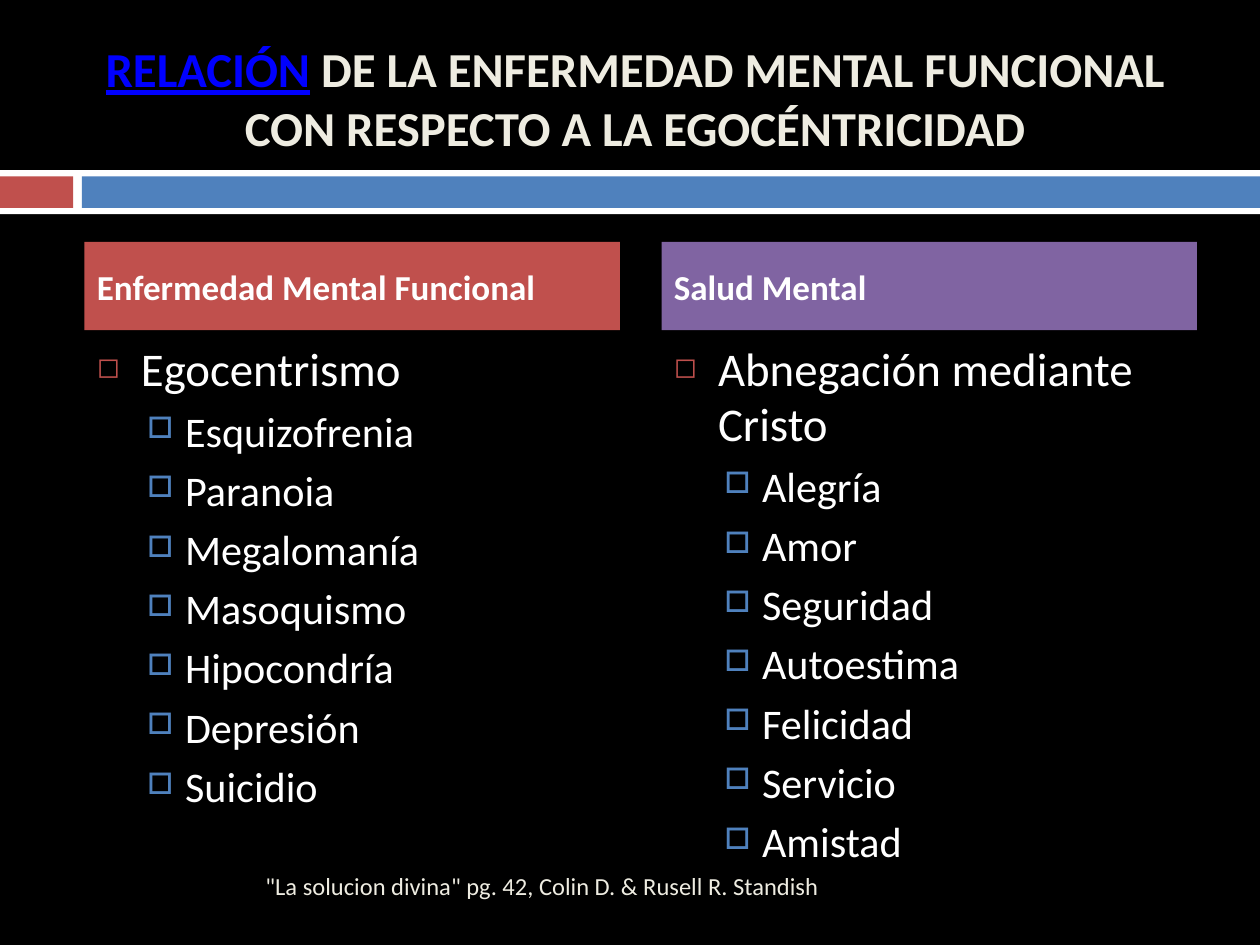
"""Builds a slide that compares functional mental illness with mental health."""
import pptx
import pptx.util
import pptx.dml.color
import pptx.enum.shapes
import pptx.enum.text
import pptx.oxml
import pptx.oxml.ns
from pptx.util import Inches

RGB = pptx.dml.color.RGBColor
BLACK = RGB(0x00, 0x00, 0x00)
WHITE = RGB(0xFF, 0xFF, 0xFF)
CREAM = RGB(0xEE, 0xEC, 0xE1)
RED = RGB(0xC0, 0x50, 0x4D)
BLUE = RGB(0x4F, 0x81, 0xBD)
PURPLE = RGB(0x80, 0x64, 0xA2)
LINK = RGB(0x00, 0x00, 0xFF)
ALIGN = pptx.enum.text.PP_ALIGN
MIDDLE = pptx.enum.text.MSO_ANCHOR.MIDDLE
TOP = pptx.enum.text.MSO_ANCHOR.TOP

LEVELS = (
    dict(size=26.8, before=7, left=0.35, hang=0.35, mark="◻", color=RED, scale=60),
    dict(size=24.1, before=5.5, left=0.7, hang=0.3, mark="□", color=BLUE, scale=70),
)
COLUMNS = (
    ("Enfermedad Mental Funcional", RED, "Egocentrismo",
     ("Esquizofrenia", "Paranoia", "Megalomanía", "Masoquismo",
      "Hipocondría", "Depresión", "Suicidio")),
    ("Salud Mental", PURPLE, "Abnegación mediante Cristo",
     ("Alegría", "Amor", "Seguridad", "Autoestima",
      "Felicidad", "Servicio", "Amistad")),
)


class Deck:
    """Holds the style and the current slide."""

    def __init__(self, font):
        self.font = font
        self.file = pptx.Presentation()
        self.file.slide_width = Inches(10)
        self.file.slide_height = Inches(7.5)
        self.slide = self.file.slides.add_slide(self.file.slide_layouts[5])
        fill = self.slide.background.fill
        fill.solid()
        fill.fore_color.rgb = BLACK

    def run(self, para, text, size, color, bold=False, under=False):
        """Adds one styled run."""
        run = para.add_run()
        run.text = text
        font = run.font
        font.name = self.font
        font.size = pptx.util.Pt(size)
        font.color.rgb = color
        font.bold = bold
        font.underline = under

    def frame(self, shape, anchor, align):
        """Sets up a text frame and returns its first paragraph."""
        frame = shape.text_frame
        frame.word_wrap = True
        frame.auto_size = pptx.enum.text.MSO_AUTO_SIZE.NONE
        frame.vertical_anchor = anchor
        para = frame.paragraphs[0]
        para.alignment = align
        return para

    def title(self, box, parts):
        """Places the title and fills it from (text, color, under) parts."""
        shape = self.slide.shapes.title
        shape.left, shape.top, shape.width, shape.height = map(Inches, box)
        para = self.frame(shape, MIDDLE, ALIGN.CENTER)
        for text, color, under in parts:
            self.run(para, text, 27.9, color, True, under)

    def rect(self, box, color):
        """Adds a plain filled rectangle."""
        kind = pptx.enum.shapes.MSO_SHAPE.RECTANGLE
        shape = self.slide.shapes.add_shape(kind, *map(Inches, box))
        shape.shadow.inherit = False
        shape.fill.solid()
        shape.fill.fore_color.rgb = color
        shape.line.fill.background()
        return shape

    def head(self, box, color, text):
        """Adds a filled column heading."""
        para = self.frame(self.rect(box, color), MIDDLE, ALIGN.LEFT)
        self.run(para, text, 20, WHITE, True)

    def text(self, box, anchor, align):
        """Adds a text box and returns its first paragraph."""
        shape = self.slide.shapes.add_textbox(*map(Inches, box))
        return self.frame(shape, anchor, align)

    def bullet(self, para, level):
        """Gives a paragraph the spacing, indent and mark of its level."""
        rule = LEVELS[level]
        para.level = level
        para.space_before = pptx.util.Pt(rule["before"])
        para.line_spacing = 0.98
        props = para._p.get_or_add_pPr()
        props.set("marL", str(Inches(rule["left"])))
        props.set("indent", str(-Inches(rule["hang"])))
        space = pptx.oxml.ns.nsdecls("a")
        for xml in (
            f'<a:buClr {space}><a:srgbClr val="{rule["color"]}"/></a:buClr>',
            f'<a:buSzPct {space} val="{rule["scale"] * 1000}"/>',
            f'<a:buChar {space} char="{rule["mark"]}"/>',
        ):
            props.append(pptx.oxml.parse_xml(xml))

    def list(self, box, lead, items):
        """Adds a lead bullet with second-level items below it."""
        para = first = self.text(box, TOP, ALIGN.LEFT)
        frame = first._parent
        for spot, text in enumerate((lead, *items)):
            level = min(spot, 1)
            if spot:
                para = frame.add_paragraph()
            self.bullet(para, level)
            self.run(para, text, LEVELS[level]["size"], WHITE)


def main():
    """Builds and saves the slide."""
    deck = Deck("Calibri")
    deck.rect((0, 1.35, 10, 0.35), WHITE)
    deck.rect((0, 1.4, 0.58, 0.25), RED)
    deck.rect((0.65, 1.4, 9.35, 0.25), BLUE)
    deck.title((0.58, 0.3, 8.92, 0.95), (
        ("RELACIÓN", LINK, True),
        (" DE LA ENFERMEDAD MENTAL FUNCIONAL CON RESPECTO A LA EGOCÉNTRICIDAD",
         CREAM, False),
    ))
    for spot, (name, color, lead, items) in enumerate(COLUMNS):
        left = 0.67 + spot * 4.58
        deck.list((left, 2.67, 4.25, 3.92), lead, items)
        deck.head((left, 1.92, 4.25, 0.7), color, name)
    para = deck.text((0.67, 6.83, 5.93, 0.4), MIDDLE, ALIGN.RIGHT)
    deck.run(para, '"La solucion divina" pg. 42, Colin D. & Rusell R. Standish',
             14, CREAM)
    deck.file.save("out.pptx")


if __name__ == "__main__":
    main()
